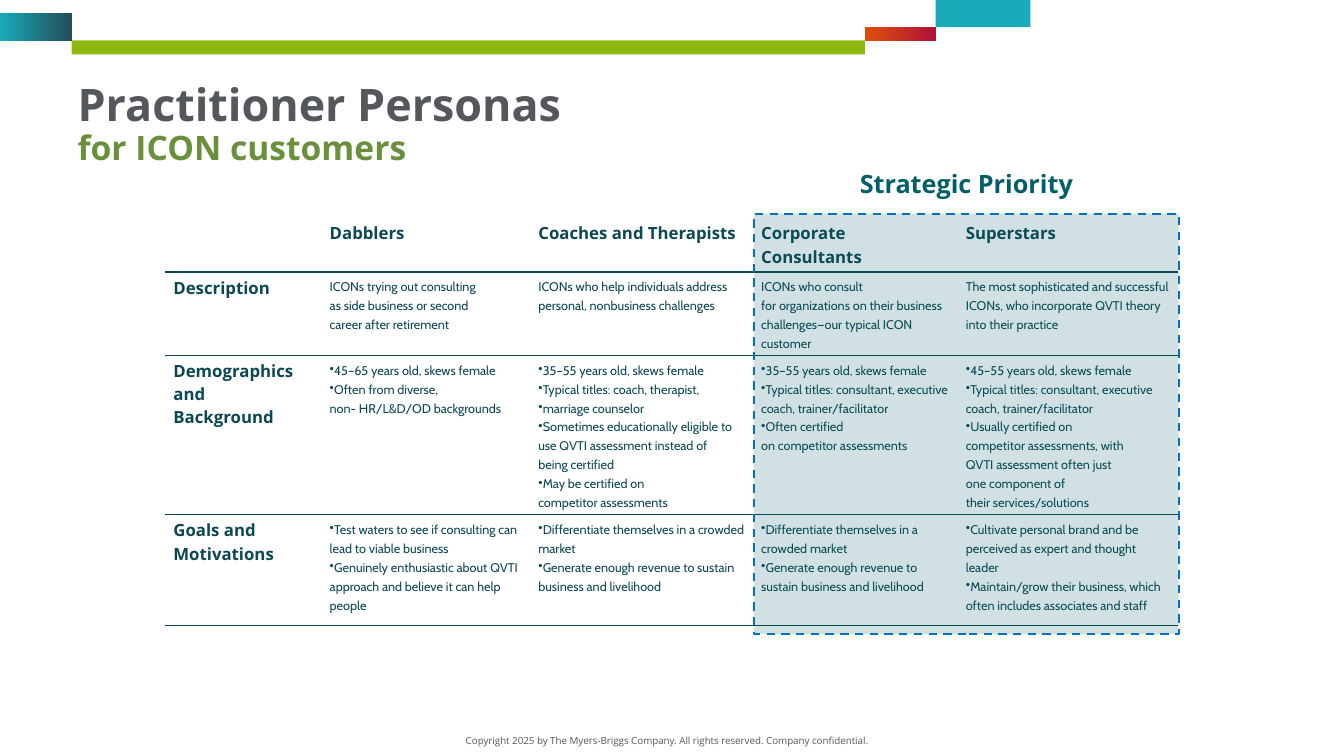
from lxml import etree
from pptx import Presentation
from pptx import util as u
from pptx.dml.color import RGBColor
from pptx.enum import dml, shapes, text
from pptx.oxml.ns import qn

IN = u.Inches
GREY = RGBColor(0x54, 0x57, 0x5B)
GREEN = RGBColor(0x6B, 0x90, 0x3C)
LIME = RGBColor(0x8C, 0xB8, 0x0F)
AQUA = RGBColor(0x19, 0xAA, 0xBA)
SLATE = RGBColor(0x24, 0x4C, 0x5A)
ORANGE = RGBColor(0xDC, 0x50, 0x0A)
RED = RGBColor(0xAE, 0x12, 0x37)
INK = RGBColor(0x0C, 0x48, 0x53)
TEAL = RGBColor(0x02, 0x5E, 0x68)
BLUE = RGBColor(0x00, 0x70, 0xC0)
WHITE = RGBColor(0xFF, 0xFF, 0xFF)

COLS = [1.55, 2.07, 2.21, 2.03, 2.18]
HEIGHTS = [0.48, 0.79, 1.57, 1.1, 0.25]
# A tilde stands for a no-break space
ROWS = [
    ["", "Dabblers", "Coaches and Therapists", "Corporate Consultants", "Superstars"],
    ["Description",
     "ICONs trying out consulting as~side~business or second career~after~retirement",
     "ICONs who help individuals~address personal, nonbusiness~challenges",
     "ICONs who consult for~organizations on their~business challenges—our~typical ICON customer",
     "The most sophisticated and~successful ICONs, who~incorporate QVTI theory into~their practice"],
    ["Demographics\nand\nBackground",
     "45–65 years old, skews~female\n"
     "Often from diverse, non-~HR/L&D/OD backgrounds",
     "35–55 years old, skews~female\n"
     "Typical~titles: coach,~therapist,\n"
     "marriage~counselor\n"
     "Sometimes~educationally~eligible~to use QVTI~assessment instead of being~certified\n"
     "May~be certified on competitor~assessments",
     "35–55 years old, skews~female\n"
     "Typical titles: consultant,~executive coach,~trainer/facilitator\n"
     "Often certified on~competitor~assessments",
     "45–55 years old, skews female\n"
     "Typical titles: consultant,~executive coach,~trainer/facilitator\n"
     "Usually certified on competitor~assessments, with QVTI~assessment "
     "often just one~component of their~services/solutions"],
    ["Goals and\nMotivations",
     "Test waters to see if~consulting~can lead to viable~business\n"
     "Genuinely enthusiastic~about QVTI approach and~believe it can help people",
     "Differentiate themselves in a~crowded market\n"
     "Generate enough revenue to~sustain business and livelihood",
     "Differentiate themselves in~a crowded market\n"
     "Generate enough revenue~to sustain business and~livelihood",
     "Cultivate personal brand and~be perceived as expert and~thought leader\n"
     "Maintain/grow their business,~which often includes~associates and staff"],
    [""] * 5,
]


def style(run, size, color, bold=False, face="Open Sans"):
    font = run.font
    font.size, font.bold, font.name = u.Pt(size), bold, face
    font.color.rgb = color


def block(slide, box, *colors):
    shape = slide.shapes.add_shape(shapes.MSO_SHAPE.RECTANGLE, *map(IN, box))
    shape.shadow.inherit = False
    shape.line.fill.background()
    if len(colors) == 1:
        shape.fill.solid()
        shape.fill.fore_color.rgb = colors[0]
    else:
        shape.fill.gradient()
        shape.fill.gradient_angle = 0
        for stop, color, place in zip(shape.fill.gradient_stops, colors, (0, 1)):
            stop.color.rgb, stop.position = color, place
    return shape


def label(slide, box, words, size, color, bold=False):
    frame = slide.shapes.add_textbox(*map(IN, box)).text_frame
    frame.word_wrap = True
    frame.text = words
    para = frame.paragraphs[0]
    para.alignment = text.PP_ALIGN.CENTER
    style(para.runs[0], size, color, bold)


def title(slide):
    head = slide.shapes.title
    head.left, head.top, head.width, head.height = map(IN, (0.67, 0.72, 11.3, 0.99))
    frame = head.text_frame
    frame.text = "Practitioner Personas\vfor ICON customers"
    frame.vertical_anchor = text.MSO_ANCHOR.BOTTOM
    frame.auto_size = text.MSO_AUTO_SIZE.NONE
    para = frame.paragraphs[0]
    para.alignment = text.PP_ALIGN.LEFT
    para.line_spacing = 0.9
    for run, size, color in zip(para.runs, (32, 24), (GREY, GREEN)):
        style(run, size, color, True)
    gap = para._p.find(qn("a:br"))
    etree.SubElement(gap, qn("a:rPr"), sz="3200")


def edge(cell, side, color, width):
    line = etree.SubElement(cell._tc.get_or_add_tcPr(), qn("a:ln" + side),
                            w=str(u.Pt(width)))
    fill = etree.SubElement(line, qn("a:solidFill"))
    etree.SubElement(fill, qn("a:srgbClr"), val=str(color))


def bullet(para):
    props = para._p.get_or_add_pPr()
    props.set("marL", "0")
    props.set("indent", "0")
    etree.SubElement(props, qn("a:buChar"), char="•")


def fill(cell, row, col):
    cell.margin_left = cell.margin_right = IN(0.08)
    cell.margin_top = cell.margin_bottom = IN(0.04)
    cell.text_frame.text = ROWS[row][col].replace("~", chr(160))
    head = row == 0 or col == 0
    for para in cell.text_frame.paragraphs:
        para.line_spacing = u.Pt(16.5 if head else 13.5)
        if row > 1 and para.runs and not head:
            bullet(para)
        for run in para.runs:
            if head:
                style(run, 12, INK, True)
            else:
                style(run, 9, INK, face="Cabin")
    # Rules: none outside, a heavy one under the header
    rules = [(WHITE, 1), (INK, 2), (INK, 0.75), (INK, 0.75), (INK, 0.75), (WHITE, 1)]
    edge(cell, "L", WHITE, 1)
    edge(cell, "R", WHITE, 1)
    edge(cell, "T", *rules[row])
    edge(cell, "B", *rules[row + 1])
    cell.fill.background()


def grid(slide):
    frame = slide.shapes.add_table(len(ROWS), len(COLS), IN(1.64), IN(2.16),
                                   IN(sum(COLS)), IN(sum(HEIGHTS)))
    table = frame.table
    table.first_row = table.horz_banding = False
    for col, width in enumerate(COLS):
        table.columns[col].width = IN(width)
    for row, height in enumerate(HEIGHTS):
        table.rows[row].height = IN(height)
        for col in range(len(COLS)):
            fill(table.cell(row, col), row, col)


def focus(slide):
    shape = block(slide, (7.48, 2.12, 4.21, 4.17), TEAL)
    tint = shape.fill._xPr.find(qn("a:solidFill"))[0]
    etree.SubElement(tint, qn("a:alpha"), val="18000")
    shape.line.color.rgb = BLUE
    shape.line.width = u.Pt(1.5)
    shape.line.dash_style = dml.MSO_LINE.DASH


def main():
    deck = Presentation()
    deck.slide_width, deck.slide_height = IN(13.33), IN(7.5)
    slide = deck.slides.add_slide(deck.slide_layouts[5])
    # Top band
    block(slide, (0.71, 0.4, 7.87, 0.14), LIME)
    block(slide, (0, 0.13, 0.71, 0.28), AQUA, SLATE)
    block(slide, (9.28, -0.01, 0.94, 0.28), AQUA)
    block(slide, (8.58, 0.27, 0.7, 0.14), ORANGE, RED)
    # Footer
    label(slide, (4.46, 7.24, 4.31, 0.22),
          "Copyright 2025 by The Myers-Briggs Company. All rights reserved. "
          "Company confidential.", 7, GREY)
    # Personas
    title(slide)
    grid(slide)
    focus(slide)
    label(slide, (7.21, 1.62, 4.75, 0.4), "Strategic Priority", 18, TEAL, True)
    deck.save("out.pptx")


if __name__ == "__main__":
    main()
